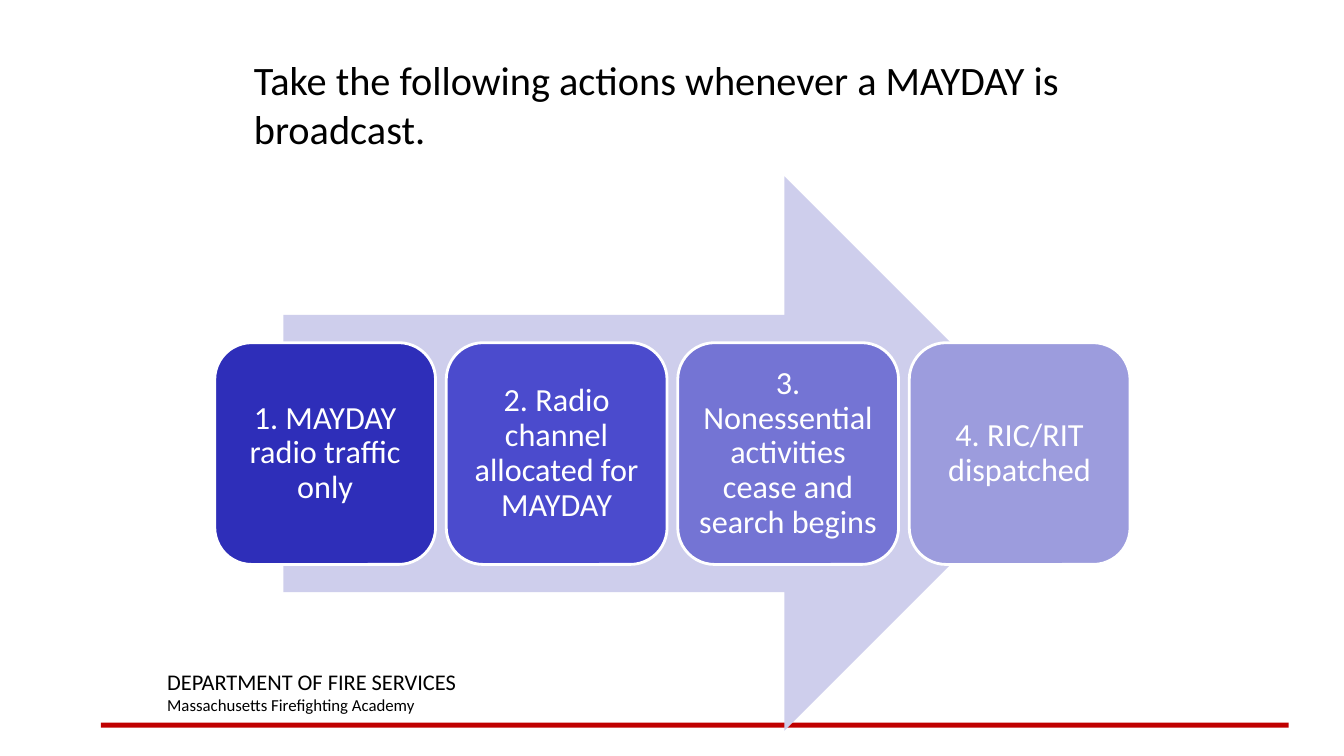
"""Build the MAYDAY actions slide."""
import pptx
import pptx.dml.color
import pptx.enum.shapes
import pptx.enum.text
import pptx.util

Inches = pptx.util.Inches
Pt = pptx.util.Pt
SHAPE = pptx.enum.shapes.MSO_SHAPE
ANCHOR = pptx.enum.text.MSO_ANCHOR
ALIGN = pptx.enum.text.PP_ALIGN


def rgb(value):
    return pptx.dml.color.RGBColor.from_string(value)


class Deck:
    font = "Calibri"
    ink = "000000"
    paper = "FFFFFF"

    def __init__(self, prs):
        self.s = prs.slides.add_slide(prs.slide_layouts[6])

    def style(self, p, size, color):
        p.font.name = self.font
        p.font.size = Pt(size)
        p.font.color.rgb = rgb(color)

    def shape(self, kind, x, y, w, h, fill):
        sp = self.s.shapes.add_shape(kind, Inches(x), Inches(y), Inches(w), Inches(h))
        sp.shadow.inherit = False
        sp.fill.solid()
        sp.fill.fore_color.rgb = rgb(fill)
        sp.line.fill.background()
        return sp

    def text(self, x, y, w, h, lines):
        sp = self.s.shapes.add_textbox(Inches(x), Inches(y), Inches(w), Inches(h))
        tf = sp.text_frame
        tf.word_wrap = True
        for i, (words, size) in enumerate(lines):
            p = tf.add_paragraph() if i else tf.paragraphs[0]
            p.text = words
            self.style(p, size, self.ink)

    def step(self, x, y, w, h, words, fill):
        sp = self.shape(SHAPE.ROUNDED_RECTANGLE, x, y, w, h, fill)
        sp.line.color.rgb = rgb(self.paper)
        sp.line.width = Pt(2)
        tf = sp.text_frame
        tf.word_wrap = True
        tf.vertical_anchor = ANCHOR.MIDDLE
        tf.margin_left = tf.margin_right = Inches(0.1)
        tf.margin_top = tf.margin_bottom = Inches(0.1)
        p = tf.paragraphs[0]
        p.text = words
        p.alignment = ALIGN.CENTER
        p.line_spacing = 0.9
        self.style(p, 23, self.paper)


def main():
    prs = pptx.Presentation()
    prs.slide_width = Inches(13.33)
    prs.slide_height = Inches(7.5)
    deck = Deck(prs)

    deck.shape(SHAPE.RECTANGLE, 1, 7.17, 11.78, 0.05, "C00000")
    deck.text(1.56, 6.58, 5.67, 0.57, [
        ("DEPARTMENT OF FIRE SERVICES", 16),
        ("Massachusetts Firefighting Academy", 12),
    ])
    deck.shape(SHAPE.RIGHT_ARROW, 2.81, 1.75, 7.72, 5.5, "CECEEC")

    steps = [
        ("1. MAYDAY radio traffic only", "2E2EB9"),
        ("2. Radio channel allocated for MAYDAY", "4B4BCD"),
        ("3. Nonessential activities cease and search begins", "7474D4"),
        ("4. RIC/RIT dispatched", "9C9CDD"),
    ]
    left, pitch = 2.13, 2.296
    for i, (words, fill) in enumerate(steps):
        deck.step(left + i * pitch, 3.4, 2.19, 2.2, words, fill)

    deck.text(2.42, 0.5, 8.5, 1, [
        ("Take the following actions whenever a MAYDAY is broadcast.", 28.8),
    ])
    prs.save("out.pptx")


if __name__ == "__main__":
    main()
